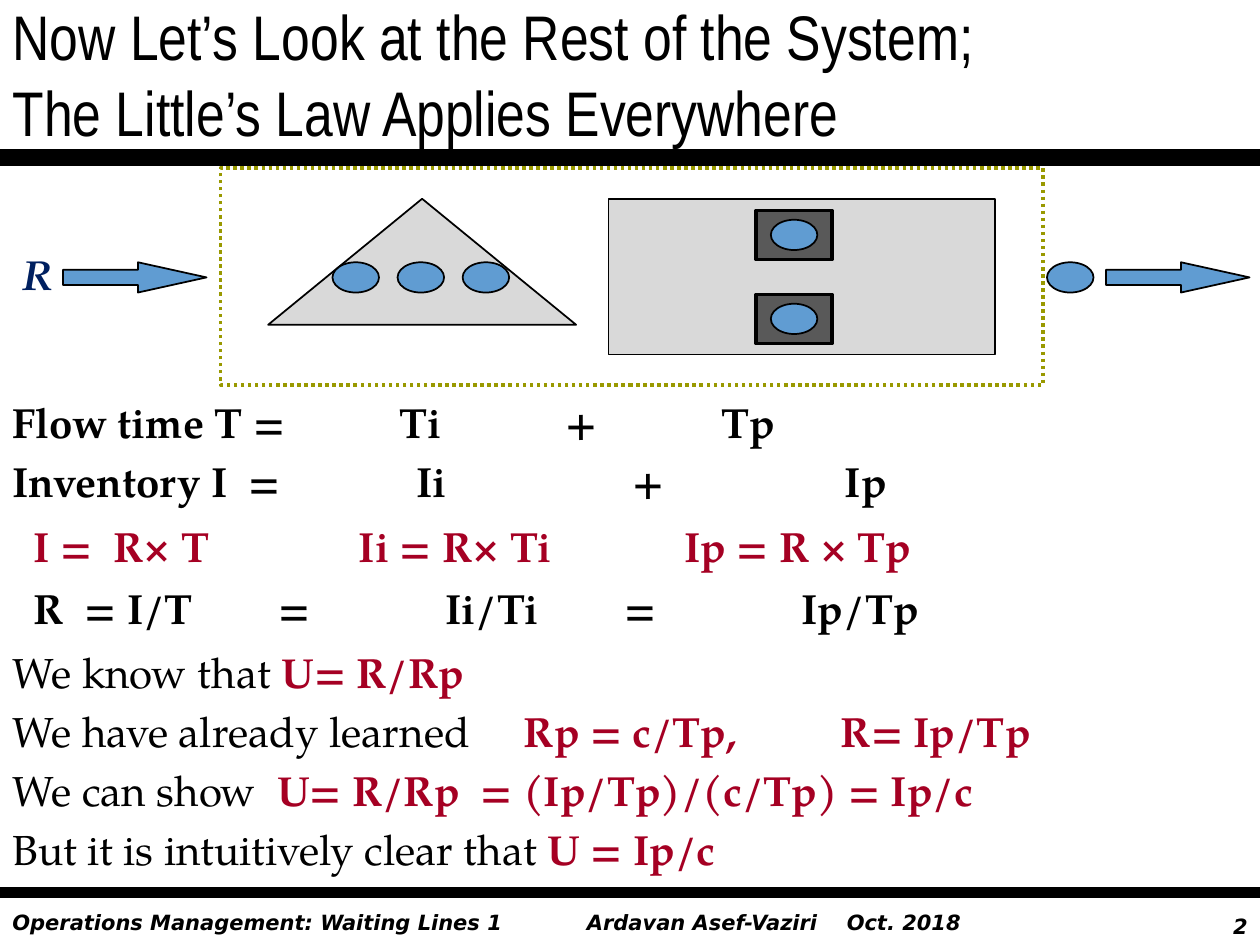
from lxml.etree import SubElement
from pptx import Presentation
from pptx.dml.color import RGBColor
from pptx.enum.dml import MSO_LINE
from pptx.enum.shapes import MSO_CONNECTOR, MSO_SHAPE
from pptx.enum.text import MSO_ANCHOR, PP_ALIGN
from pptx.oxml.ns import qn
from pptx.util import Pt

HUES = {"ink": "000000", "red": "A50023", "navy": "002060", "blue": "609CD2",
        "pale": "D9D9D9", "dark": "595959", "olive": "999900"}
SERIF, SANS, HEAD = "TeX Gyre Pagella", "DejaVu Sans", "Arial Narrow"
DOT = (26.6, 17.3)


def hue(name):
    """Return the named colour."""
    return RGBColor.from_string(HUES[name])


def style(font, size, face, tone="ink", bold=False, slant=False):
    """Set the look of a font."""
    font.size, font.name, font.bold, font.italic = Pt(size), face, bold, slant
    font.color.rgb = hue(tone)


def set_tabs(para, stops):
    """Give a paragraph left tab stops, in points."""
    tabs = SubElement(para._p.get_or_add_pPr(), qn("a:tabLst"))
    for stop in stops:
        SubElement(tabs, qn("a:tab"), pos=str(Pt(stop)), algn="l")


def add_text(slide, box):
    """Add an empty wrapping text box and return its frame."""
    frame = slide.shapes.add_textbox(*map(Pt, box)).text_frame
    frame.word_wrap = True
    return frame


def add_line(slide, box, text, stops=(), tone="ink", gap=4.8):
    """Add one bold line of the formula text."""
    frame = add_text(slide, box)
    para = frame.paragraphs[0]
    para.text, para.space_before = text, Pt(gap)
    style(para.font, 24, SERIF, tone, bold=True)
    if stops:
        set_tabs(para, stops)
    return frame


def add_form(slide, kind, box, fill=None, edge="ink", width=1):
    """Add a flat outlined shape."""
    form = slide.shapes.add_shape(kind, *map(Pt, box))
    form.shadow.inherit = False
    if fill:
        form.fill.solid()
        form.fill.fore_color.rgb = hue(fill)
    else:
        form.fill.background()
    form.line.color.rgb = hue(edge)
    form.line.width = Pt(width)
    return form


def add_rule(slide, y, width):
    """Draw a black rule across the slide."""
    rule = slide.shapes.add_connector(MSO_CONNECTOR.STRAIGHT, 0, Pt(y), Pt(720), Pt(y))
    rule.line.color.rgb = hue("ink")
    rule.line.width = Pt(width)
    SubElement(rule._element.spPr, qn("a:effectLst"))


def add_title(slide, box):
    """Place the title and the rule below it."""
    title = slide.shapes.title
    title.left, title.top, title.width, title.height = map(Pt, box)
    frame = title.text_frame
    frame.text = "Now Let’s Look at the Rest of the System;\vThe Little’s Law Applies Everywhere"
    frame.vertical_anchor = MSO_ANCHOR.MIDDLE
    para = frame.paragraphs[0]
    para.alignment = PP_ALIGN.LEFT
    style(para.font, 36, HEAD)
    add_rule(slide, 90, 10)


def add_flow(slide, box):
    """Draw the waiting line, the servers and the flow through them."""
    left, top, wide, high = box
    mid = top + 53.9
    add_form(slide, MSO_SHAPE.ISOSCELES_TRIANGLE, (left + 27.2, top + 17.6, 176, 72), "pale")
    add_form(slide, MSO_SHAPE.RECTANGLE, (left + 221.8, top + 17.6, 221, 89), "pale")
    for y in (top + 24.3, top + 72.3):
        add_form(slide, MSO_SHAPE.RECTANGLE, (left + 306, y, 43.5, 28), "dark", width=2)
        add_form(slide, MSO_SHAPE.OVAL, (left + 314.5, y + 5.3, *DOT), "blue")
    for x in (64, 101.2, 138.4, 472.3):
        add_form(slide, MSO_SHAPE.OVAL, (left + x, mid, *DOT), "blue")
    for x in (36, 632):
        arrow = add_form(slide, MSO_SHAPE.RIGHT_ARROW, (x, mid, 82, 17.3), "blue")
        arrow.adjustments[0], arrow.adjustments[1] = 0.5, 2.265
    frame = add_form(slide, MSO_SHAPE.RECTANGLE, box, edge="olive", width=2)
    frame.line.dash_style = MSO_LINE.ROUND_DOT
    rate = add_line(slide, (0, mid - 11.5, 48, 49), "R", tone="navy")
    rate.margin_left = Pt(12.8)
    rate.paragraphs[0].font.italic = True


def add_laws(slide, box):
    """Write the flow time, inventory and rate equations."""
    left, top, wide, high = box
    frame = add_line(slide, box, "Flow time T =\tTi\t+\tTp", (221.4, 316.2, 405.4))
    para = frame.add_paragraph()
    para.text, para.space_before = "Inventory I  =\tIi\t+\tIp", Pt(4.8)
    style(para.font, 24, SERIF, bold=True)
    set_tabs(para, (231, 354.5, 475.7))
    for x, width, text in ((12, 138, "I =  R× T"), (198, 150, "Ii = R× Ti"),
                           (384, 174, "Ip = R × Tp")):
        add_line(slide, (left + x, top + 71, width, 36), text, tone="red")
    add_line(slide, (left + 12, top + 106.5, 708, 36), "R  = I/T\t=\tIi/Ti\t=\tIp/Tp",
             (140, 235.5, 337.7, 439))


def add_proof(slide, box):
    """Write the utilisation steps, with the formulas in red."""
    rows = (("We know that ", "U= R/Rp"),
            ("We have already learned\t", "Rp = c/Tp,\tR= Ip/Tp"),
            ("We can show  ", "U= R/Rp  = (Ip/Tp)/(c/Tp) = Ip/c"),
            ("But it is intuitively clear that ", "U = Ip/c"))
    frame = add_text(slide, box)
    for i, (words, rule) in enumerate(rows):
        para = frame.add_paragraph() if i else frame.paragraphs[0]
        para.space_before = Pt(4.8)
        for text, tone, bold in ((words, "ink", False), (rule, "red", True)):
            run = para.add_run()
            run.text = text
            style(run.font, 24, SERIF, tone, bold)
        if "\t" in words:
            set_tabs(para, (292.2, 473.4))


def add_foot(slide, box):
    """Place the footer rule, its two labels and the page number."""
    left, top, wide, high = box
    add_rule(slide, top - 6.2, 6)
    for x, y, width, text, side in (
            (0, 0, 336, "Operations Management: Waiting Lines 1", PP_ALIGN.LEFT),
            (328.3, 0, 241, "Ardavan Asef-Vaziri\tOct. 2018", PP_ALIGN.LEFT),
            (666, 2.2, 54, "2", PP_ALIGN.RIGHT)):
        para = add_text(slide, (left + x, top + y, width, high)).paragraphs[0]
        para.text, para.alignment = text, side
        style(para.font, 12, SANS, bold=True, slant=True)
        if "\t" in text:
            set_tabs(para, (148.5,))


def main():
    """Build and save the slide."""
    deck = Presentation()
    deck.slide_width, deck.slide_height = Pt(720), Pt(540)
    slide = deck.slides.add_slide(deck.slide_layouts[5])
    add_title(slide, (0, 0, 720, 84))
    add_foot(slide, (0, 516.2, 720, 21.6))
    add_flow(slide, (126, 96, 470, 124))
    add_laws(slide, (0, 223, 624, 72))
    add_proof(slide, (0, 366, 720, 148))
    deck.save("out.pptx")


if __name__ == "__main__":
    main()
